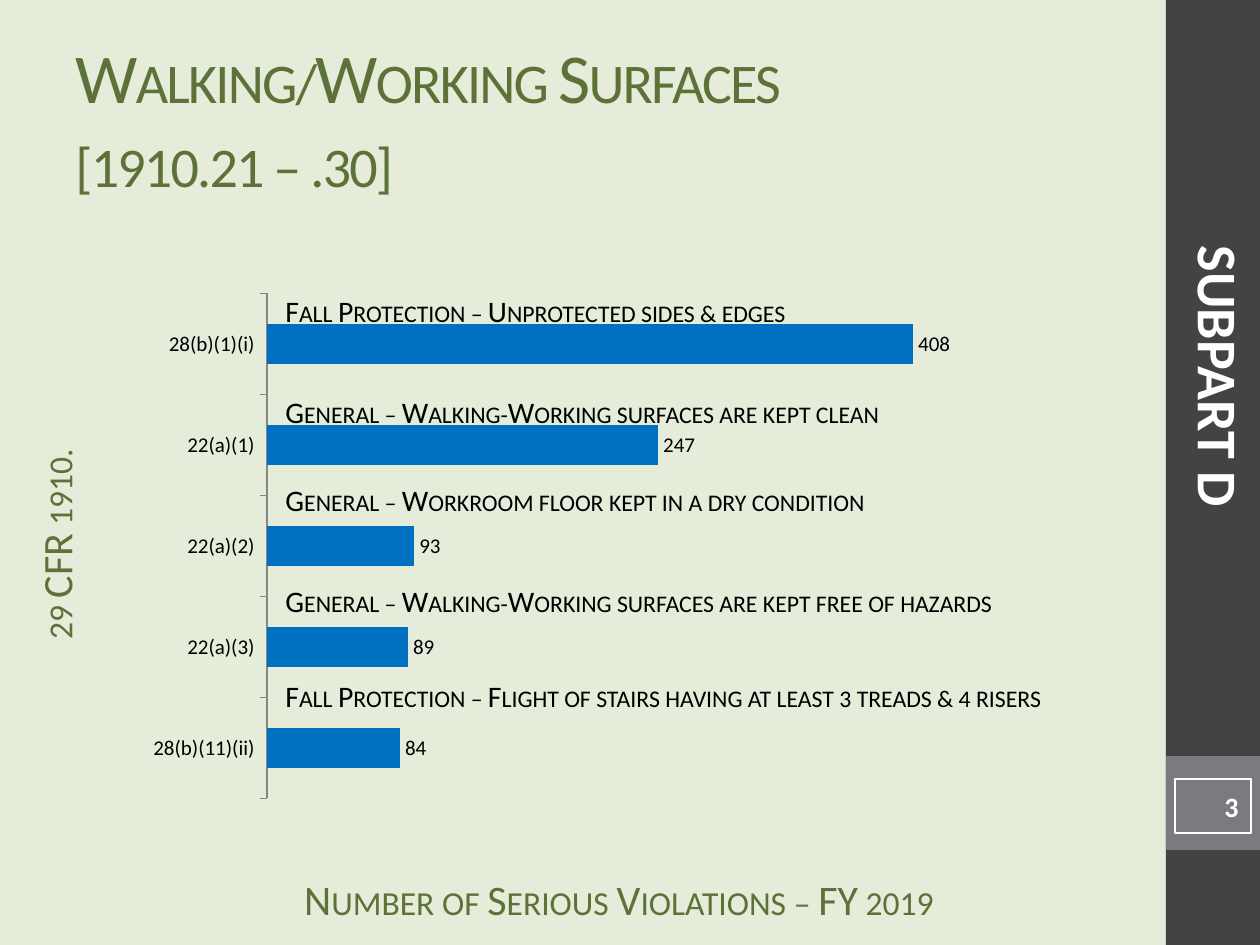
"""Build the Subpart D slide on walking and working surface violations."""
from pptx import Presentation
from pptx.chart.data import CategoryChartData
from pptx.dml.color import RGBColor
from pptx.enum.chart import XL_CHART_TYPE, XL_LABEL_POSITION, XL_TICK_MARK
from pptx.enum.shapes import MSO_SHAPE
from pptx.enum.text import MSO_ANCHOR, MSO_AUTO_SIZE, PP_ALIGN
from pptx.util import Emu, Pt

PX = 914400 / 126
FONT = "Calibri"
PALE = RGBColor(0xE5, 0xEC, 0xD9)
DARK = RGBColor(0x43, 0x43, 0x42)
GRAY = RGBColor(0x79, 0x7B, 0x7E)
GREEN = RGBColor(0x5D, 0x72, 0x38)
BLUE = RGBColor(0x00, 0x70, 0xC0)
AXIS = RGBColor(0x86, 0x86, 0x86)
BLACK = RGBColor(0, 0, 0)
WHITE = RGBColor(0xFF, 0xFF, 0xFF)

deck = Presentation()
deck.slide_width = Emu(round(1260 * PX))
deck.slide_height = Emu(round(945 * PX))
slide = deck.slides.add_slide(deck.slide_layouts[6])
slide.background.fill.solid()
slide.background.fill.fore_color.rgb = PALE
shapes = slide.shapes


def scale(*box):
    return [Emu(round(n * PX)) for n in box]


def write(shape, text, size, color, align=PP_ALIGN.LEFT, anchor=MSO_ANCHOR.TOP,
          bold=False, caps=True, wrap=True, grow=False, tight=False, space=0, turn=0):
    shape.rotation = turn
    frame = shape.text_frame
    frame.word_wrap = wrap
    frame.vertical_anchor = anchor
    frame.auto_size = MSO_AUTO_SIZE.SHAPE_TO_FIT_TEXT if grow else MSO_AUTO_SIZE.NONE
    if tight:
        frame.margin_top = 0
    line = frame.paragraphs[0]
    line.text = text
    line.alignment = align
    for run in line.runs:
        font = run.font
        font.name, font.size, font.bold = FONT, Pt(size), bold
        font.color.rgb = color
        props = run._r.get_or_add_rPr()
        if caps:
            props.set("cap", "small")
        if space:
            props.set("spc", str(space))


for box, color in (((1166, 0, 94, 945), DARK), ((1166, 756, 94, 94), GRAY)):
    panel = shapes.add_shape(MSO_SHAPE.RECTANGLE, *scale(*box))
    panel.shadow.inherit = False
    panel.fill.solid()
    panel.fill.fore_color.rgb = color
    panel.line.fill.background()

for box, text, turn in (
    ((262, 873, 714, 42), "Number of Serious Violations – FY 2019", 0),
    ((-197, 508, 528, 73), "29 CFR 1910.", 270),
):
    write(shapes.add_textbox(*scale(*box)), text, 24, GREEN,
          align=PP_ALIGN.CENTER, tight=True, turn=turn)

data = CategoryChartData()
data.categories = ["28(b)(11)(ii)", "22(a)(3)", "22(a)(2)", "22(a)(1)", "28(b)(1)(i)"]
data.add_series("Series 1", (84, 89, 93, 247, 408))
chart = shapes.add_chart(XL_CHART_TYPE.BAR_CLUSTERED, *scale(136, 283, 861, 526), data).chart
chart.has_legend = False
chart.has_title = False
chart.font.name = FONT
chart.font.size = Pt(10)
chart.font.color.rgb = BLACK

cats = chart.category_axis
cats.major_tick_mark = XL_TICK_MARK.OUTSIDE
cats.minor_tick_mark = XL_TICK_MARK.NONE
cats.has_major_gridlines = False
cats.tick_labels.font.size = Pt(12)
cats.format.line.color.rgb = AXIS
vals = chart.value_axis
vals.visible = False
vals.has_major_gridlines = False
vals.minimum_scale = 0
vals.maximum_scale = 450

plot = chart.plots[0]
plot.gap_width = 150
plot.vary_by_categories = False
bars = plot.series[0]
bars.format.fill.solid()
bars.format.fill.fore_color.rgb = BLUE
tags = bars.data_labels
tags.show_value = True
tags.position = XL_LABEL_POSITION.OUTSIDE_END
tags.font.size = Pt(12)

write(shapes.add_textbox(*scale(63, 38, 1102, 158)),
      "Walking/Working Surfaces \v[1910.21 – .30]", 40, GREEN,
      anchor=MSO_ANCHOR.MIDDLE, space=-100)

badge = shapes.add_shape(MSO_SHAPE.RECTANGLE, *scale(1175, 779, 76, 54))
badge.shadow.inherit = False
badge.fill.background()
badge.line.color.rgb = WHITE
badge.line.width = Pt(1.5)
write(badge, "3", 16, WHITE, align=PP_ALIGN.RIGHT, anchor=MSO_ANCHOR.MIDDLE,
      bold=True, caps=False)

for top, width, wrap, text in (
    (287, 544, False, "Fall Protection – Unprotected sides & edges"),
    (388, 632, False, "General – Walking-Working surfaces are kept clean"),
    (476, 625, False, "General – Workroom floor kept in a dry condition"),
    (577, 750, False, "General – Walking-Working surfaces are kept free of hazards"),
    (672, 829, True, "Fall Protection – Flight of stairs having at least 3 treads & 4 risers"),
):
    write(shapes.add_textbox(*scale(273, top, width, 49)), text, 17, BLACK,
          wrap=wrap, grow=True)

write(shapes.add_textbox(*scale(843, 336, 753, 81)), "SUBPART D", 32, WHITE,
      align=PP_ALIGN.CENTER, bold=True, caps=False, grow=True, turn=90)

deck.save("out.pptx")
